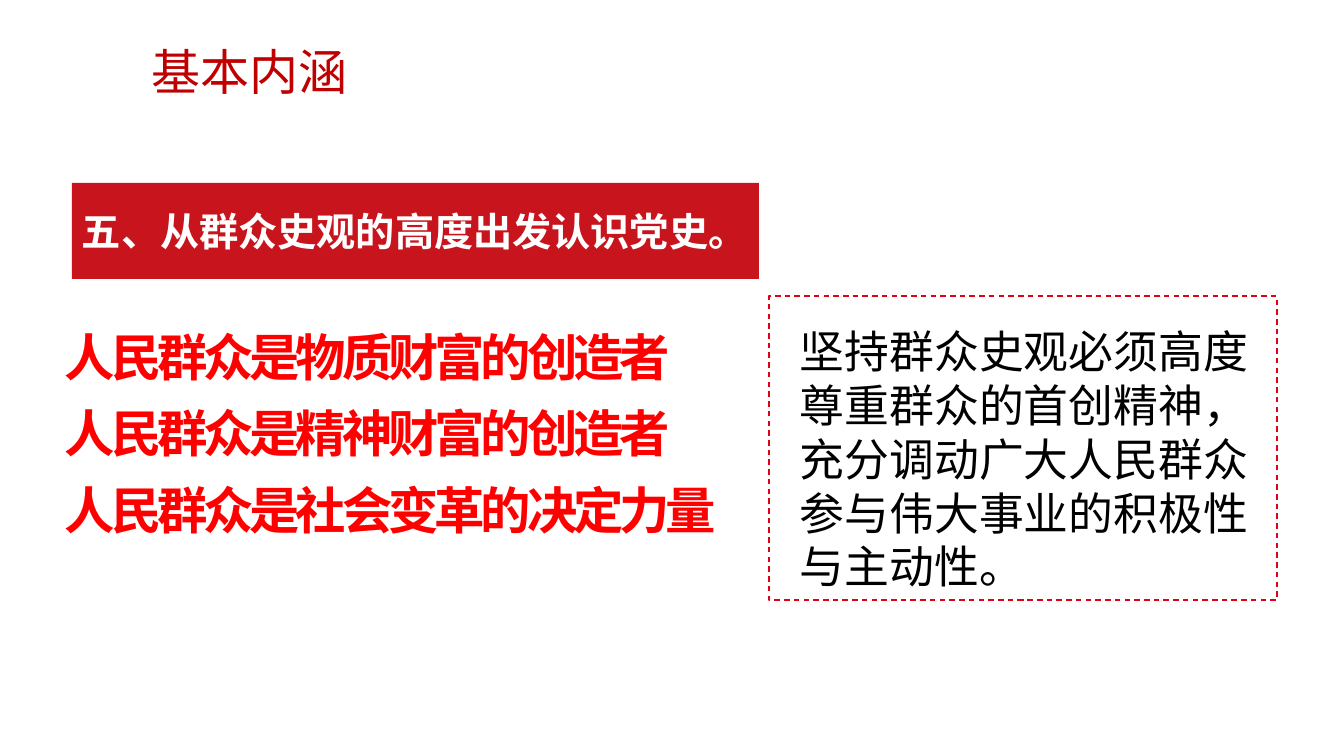
from lxml.etree import SubElement
from pptx import Presentation
from pptx.dml.color import RGBColor
from pptx.enum.dml import MSO_LINE
from pptx.enum.shapes import MSO_SHAPE
from pptx.enum.text import MSO_ANCHOR, MSO_AUTO_SIZE, PP_ALIGN
from pptx.oxml.ns import qn
from pptx.util import Pt

PX = 914400 / 100.8
TITLE_RED = RGBColor(0xC0, 0x00, 0x00)
BANNER_RED = RGBColor(0xC8, 0x14, 0x1C)
POINT_RED = RGBColor(0xFF, 0x00, 0x00)
FRAME_RED = RGBColor(0xE2, 0x00, 0x16)
WHITE = RGBColor(0xFF, 0xFF, 0xFF)
BLACK = RGBColor(0x00, 0x00, 0x00)
CJK = "Noto Sans CJK SC"
LATIN = "Calibri"

TITLE_FORMAT = {"size": Pt(35), "name": CJK}
BANNER_FORMAT = {"size": Pt(28), "name": LATIN, "bold": True}
POINT_FORMAT = {"size": Pt(36), "name": CJK, "bold": True}
CONCLUSION_FORMAT = {"size": Pt(32), "name": LATIN}

# Each point with the width of its box
POINTS = [
    ("人民群众是物质财富的创造者", 858),
    ("人民群众是精神财富的创造者", 846),
    ("人民群众是社会变革的决定力量", 936),
]


def emu(*lengths):
    return [round(length * PX) for length in lengths]


def write(frame, text, font_format, color, tracking=0):
    paragraph = frame.paragraphs[0]
    paragraph.alignment = PP_ALIGN.LEFT
    run = paragraph.add_run()
    run.text = text
    for attribute, value in font_format.items():
        setattr(run.font, attribute, value)
    run.font.color.rgb = color
    properties = run.font._element
    SubElement(properties, qn("a:ea")).set("typeface", font_format["name"])
    if tracking:
        properties.set("spc", str(tracking * 100))


def add_text(slide, box, text, font_format, color, tracking=0, wrap=True):
    frame = slide.shapes.add_textbox(*emu(*box)).text_frame
    frame.word_wrap = wrap
    frame.auto_size = MSO_AUTO_SIZE.SHAPE_TO_FIT_TEXT
    write(frame, text, font_format, color, tracking)


def add_rectangle(slide, box):
    rectangle = slide.shapes.add_shape(MSO_SHAPE.RECTANGLE, *emu(*box))
    rectangle.shadow.inherit = False
    return rectangle


def add_banner(slide, box):
    banner = add_rectangle(slide, box)
    banner.fill.solid()
    banner.fill.fore_color.rgb = BANNER_RED
    banner.line.fill.background()
    banner.text_frame.word_wrap = True
    banner.text_frame.vertical_anchor = MSO_ANCHOR.MIDDLE
    write(banner.text_frame, "五、从群众史观的高度出发认识党史。", BANNER_FORMAT, WHITE)


def add_points(slide, box):
    left, top, height = box[0], box[1], box[3]
    row_height = 72
    pitch = (height - row_height) / (len(POINTS) - 1)
    for row, (point, width) in enumerate(POINTS):
        add_text(slide, (left, top + row * pitch, width, row_height),
                 point, POINT_FORMAT, POINT_RED, tracking=-3)


def add_conclusion(slide, box):
    left, top, width, height = box
    frame = add_rectangle(slide, box)
    frame.fill.background()
    frame.line.color.rgb = FRAME_RED
    frame.line.width = Pt(1)
    frame.line.dash_style = MSO_LINE.DASH
    add_text(slide, (left + 21, top + 23, width, height - 23),
             "坚持群众史观必须高度尊重群众的首创精神，"
             "充分调动广大人民群众参与伟大事业的积极性与主动性。",
             CONCLUSION_FORMAT, BLACK)


def main():
    presentation = Presentation()
    presentation.slide_width, presentation.slide_height = emu(1344, 756)
    slide = presentation.slides.add_slide(presentation.slide_layouts[6])
    add_text(slide, (142, 37, 248, 70), "基本内涵", TITLE_FORMAT, TITLE_RED, wrap=False)
    add_banner(slide, (72, 183, 687, 96))
    add_points(slide, (55, 321, 936, 225))
    add_conclusion(slide, (769, 296, 508, 304))
    presentation.save("out.pptx")


if __name__ == "__main__":
    main()
